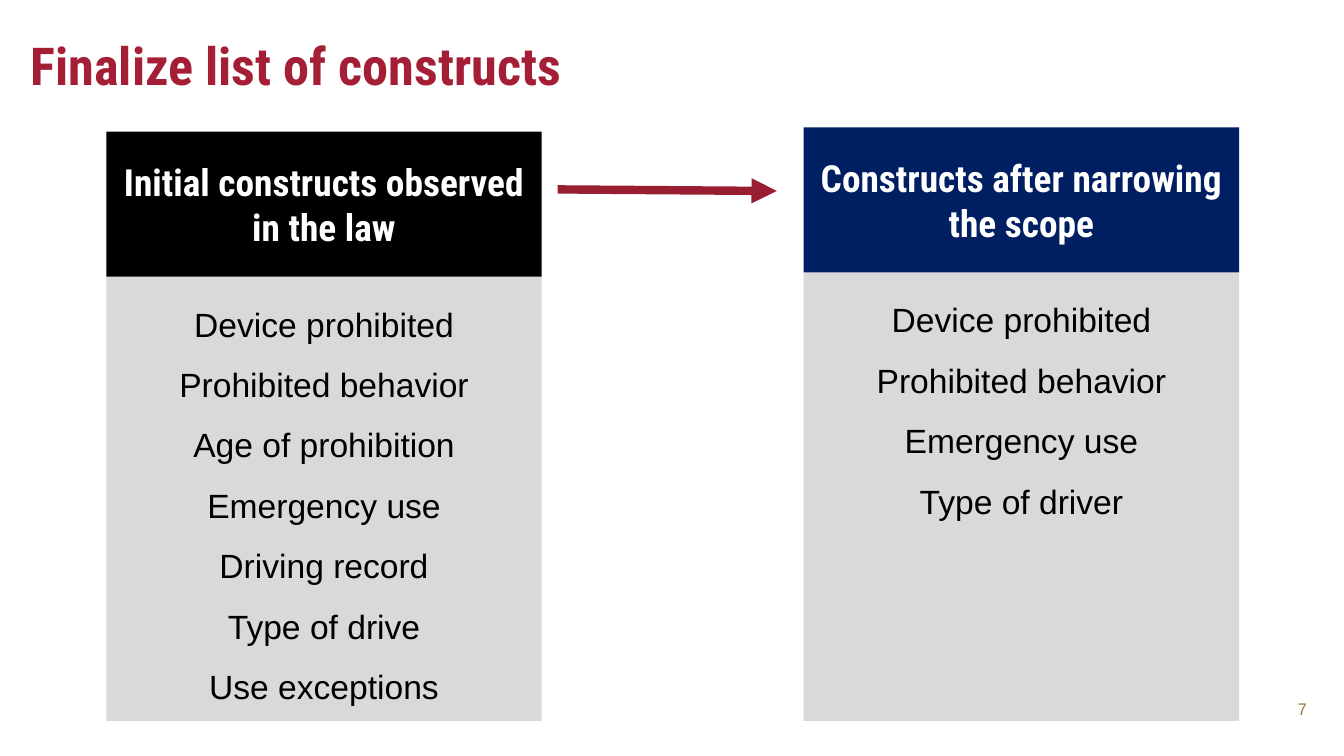
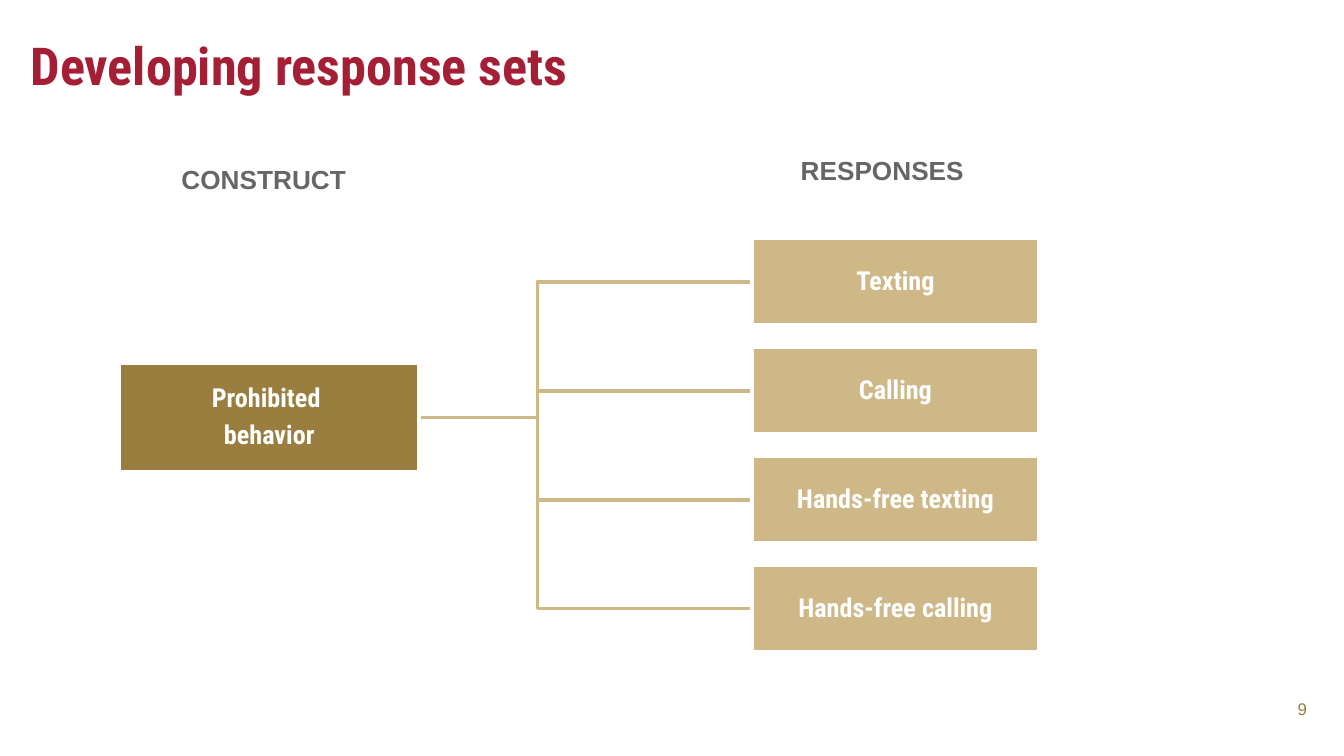
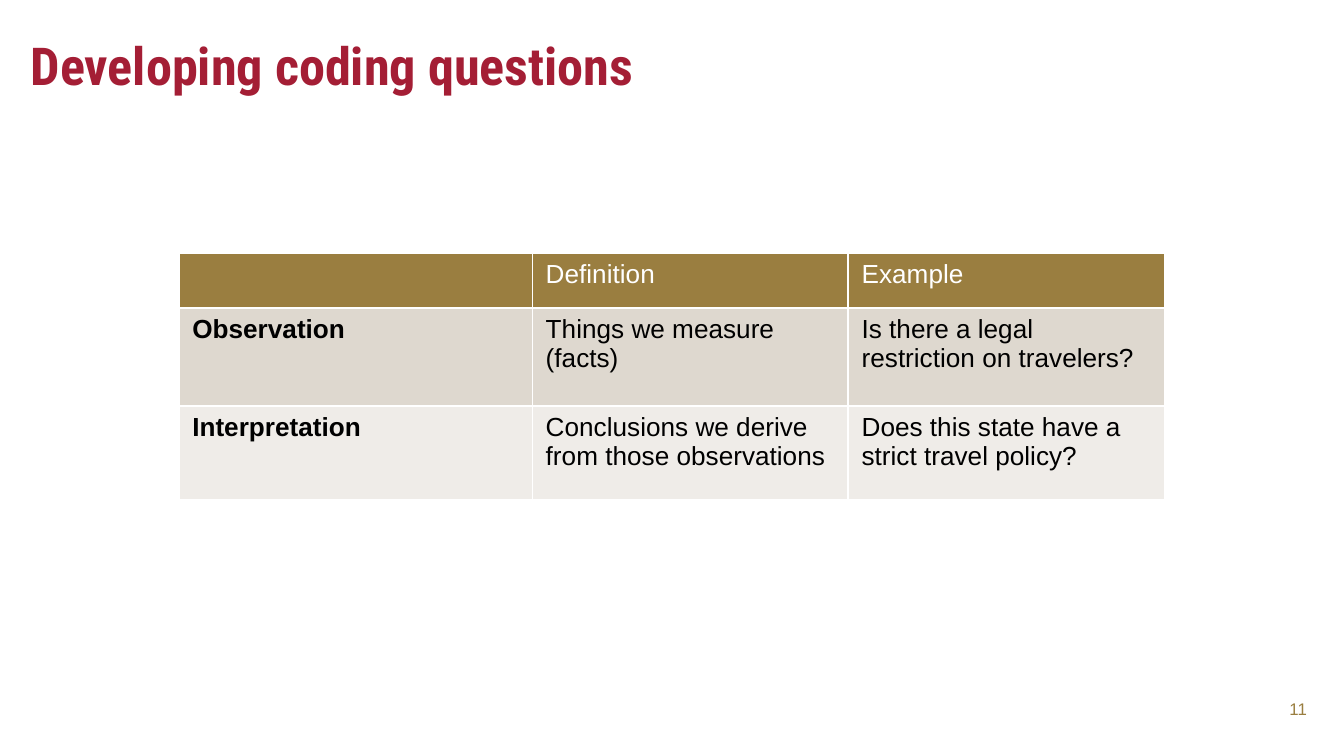
"""Builds three slides on legal constructs, response sets and coding questions."""
import pptx
import pptx.dml.color
import pptx.enum.shapes
import pptx.enum.text
import pptx.oxml
import pptx.oxml.ns
import pptx.util
from lxml import etree

Cm = pptx.util.Cm
Pt = pptx.util.Pt
ALIGN = pptx.enum.text.PP_ALIGN
ANCHOR = pptx.enum.text.MSO_ANCHOR

COLORS = {
    "title": "A41E35", "arrow": "981E32", "gold": "9A7E40", "sand": "CEB888",
    "black": "000000", "white": "FFFFFF", "navy": "001E62", "panel": "D9D9D9",
    "label": "666666", "band": "DED8CF", "light band": "EFECE8",
}
HEADING_FONT, BODY_FONT = "Roboto Condensed", "Arial"

CONSTRUCT_COLUMNS = [
    {"heading": "Initial constructs observed in the law", "color": "black",
     "left": 2.01, "top": 2.49,
     "items": ["Device prohibited", "Prohibited behavior", "Age of prohibition",
               "Emergency use", "Driving record", "Type of drive", "Use exceptions"]},
    {"heading": "Constructs after narrowing the scope", "color": "navy",
     "left": 15.19, "top": 2.41,
     "items": ["Device prohibited", "Prohibited behavior", "Emergency use",
               "Type of driver"]},
]
COLUMN_WIDTH, HEADING_HEIGHT, COLUMN_BOTTOM = 8.23, 2.74, 13.63
ARROW = (10.54, 3.58, 14.68, 3.61)

CONSTRUCT = ["Prohibited ", "behavior"]
CONSTRUCT_BOX = (2.26, 6.86, 5.66, 2.06)
RESPONSES = ["Texting", "Calling", "Hands-free texting", "Hands-free calling"]
RESPONSE_LEFT, RESPONSE_TOP, RESPONSE_PITCH = 14.22, 4.5, 2.06
RESPONSE_WIDTH, RESPONSE_HEIGHT = 5.41, 1.65
BRANCH_START, BRANCH_MIDDLE = 6.1, 10.16
LABELS = [("CONSTRUCT", (1.57, 2.97, 6.83, 1.02)),
          ("RESPONSES", (13.26, 2.79, 6.83, 1.02))]

QUESTION_ROWS = [
    ["", "Definition", "Example"],
    ["Observation", "Things we measure (facts)",
     "Is there a legal restriction on travelers?"],
    ["Interpretation", "Conclusions we derive from those observations",
     "Does this state have a strict travel policy?"],
]
ROW_FILLS = ["gold", "band", "light band"]
TABLE_LEFT, TABLE_TOP = 3.38, 4.78
COLUMN_WIDTHS, ROW_HEIGHTS = [6.68, 5.97, 5.99], [1.04, 1.85, 1.78]


def rgb(name):
    return pptx.dml.color.RGBColor.from_string(COLORS[name])


def write(frame, lines, size, color, font=BODY_FONT, bold=False, align=ALIGN.CENTER,
          anchor=ANCHOR.TOP, spacing=None, after=None, margin=None):
    frame.word_wrap = True
    frame.vertical_anchor = anchor
    if margin is not None:
        frame.margin_left = frame.margin_right = Cm(margin)
        frame.margin_top = frame.margin_bottom = Cm(margin)
    for index, line in enumerate(lines):
        paragraph = frame.paragraphs[0] if index == 0 else frame.add_paragraph()
        paragraph.alignment = align
        if spacing:
            paragraph.line_spacing = spacing
        if after:
            paragraph.space_after = Pt(after)
        run = paragraph.add_run()
        run.text = line
        run.font.size = Pt(size)
        run.font.name = font
        run.font.bold = bold
        run.font.color.rgb = rgb(color)


def add_box(slide, box, fill, outline=None):
    shape = slide.shapes.add_shape(
        pptx.enum.shapes.MSO_SHAPE.RECTANGLE, *map(Cm, box))
    shape.shadow.inherit = False
    shape.fill.solid()
    shape.fill.fore_color.rgb = rgb(fill)
    if outline:
        shape.line.color.rgb = rgb(outline)
        shape.line.width = Pt(2)
    else:
        shape.line.fill.background()
    return shape


def add_slide(presentation, title, number):
    slide = presentation.slides.add_slide(presentation.slide_layouts[5])
    shape = slide.shapes.title
    shape.left, shape.top, shape.width, shape.height = map(Cm, (0.33, 0.38, 23.27, 1.6))
    shape.text_frame.auto_size = pptx.enum.text.MSO_AUTO_SIZE.NONE
    write(shape.text_frame, [title], 28, "title", HEADING_FONT, True, ALIGN.LEFT,
          margin=0.25)
    footer = slide.shapes.add_textbox(*map(Cm, (23.83, 12.93, 1.12, 0.94)))
    write(footer.text_frame, [str(number)], 9, "gold", align=ALIGN.RIGHT,
          anchor=ANCHOR.MIDDLE, margin=0.25)
    return slide


def add_arrow(slide):
    connector = slide.shapes.add_connector(
        pptx.enum.shapes.MSO_CONNECTOR.STRAIGHT, *map(Cm, ARROW))
    connector.line.color.rgb = rgb("arrow")
    connector.line.width = Pt(4.5)
    properties = connector.element.spPr
    line = properties.find(pptx.oxml.ns.qn("a:ln"))
    etree.SubElement(line, pptx.oxml.ns.qn("a:tailEnd"), type="triangle")
    etree.SubElement(properties, pptx.oxml.ns.qn("a:effectLst"))


def build_constructs(presentation):
    slide = add_slide(presentation, "Finalize list of constructs", 7)
    for column in CONSTRUCT_COLUMNS:
        left, top = column["left"], column["top"]
        body_top = top + HEADING_HEIGHT
        body = add_box(slide, (left, body_top, COLUMN_WIDTH, COLUMN_BOTTOM - body_top),
                       "panel")
        write(body.text_frame, column["items"], 18, "black", spacing=1.5)
        heading = add_box(slide, (left, top, COLUMN_WIDTH, HEADING_HEIGHT),
                          column["color"])
        write(heading.text_frame, [column["heading"]], 20, "white", HEADING_FONT, True,
              anchor=ANCHOR.MIDDLE)
    add_arrow(slide)


def add_branch(slide, start_y, end_y):
    builder = slide.shapes.build_freeform(Cm(BRANCH_START), Cm(start_y))
    corners = [(BRANCH_MIDDLE, start_y), (BRANCH_MIDDLE, end_y), (RESPONSE_LEFT, end_y)]
    builder.add_line_segments([(Cm(x), Cm(y)) for x, y in corners], close=False)
    branch = builder.convert_to_shape()
    branch.shadow.inherit = False
    branch.fill.background()
    branch.line.color.rgb = rgb("sand")
    branch.line.width = Pt(2)


def add_node(slide, box, lines, fill):
    node = add_box(slide, box, fill, "white")
    write(node.text_frame, lines, 14, "white", HEADING_FONT, True,
          anchor=ANCHOR.MIDDLE, spacing=0.9, after=5, margin=0.03)


def build_responses(presentation):
    slide = add_slide(presentation, "Developing response sets", 9)
    tops = [RESPONSE_TOP + index * RESPONSE_PITCH for index in range(len(RESPONSES))]
    construct_middle = CONSTRUCT_BOX[1] + CONSTRUCT_BOX[3] / 2
    for top in tops:
        add_branch(slide, construct_middle, top + RESPONSE_HEIGHT / 2)
    add_node(slide, CONSTRUCT_BOX, CONSTRUCT, "gold")
    for response, top in zip(RESPONSES, tops):
        add_node(slide, (RESPONSE_LEFT, top, RESPONSE_WIDTH, RESPONSE_HEIGHT),
                 [response], "sand")
    for text, box in LABELS:
        label = slide.shapes.add_textbox(*map(Cm, box))
        write(label.text_frame, [text], 14, "label", bold=True)


def add_borders(cell):
    properties = cell._tc.get_or_add_tcPr()
    for side in ("lnL", "lnR", "lnT", "lnB"):
        properties.append(pptx.oxml.parse_xml(
            f'<a:{side} {pptx.oxml.ns.nsdecls("a")} w="12700"><a:solidFill>'
            f'<a:srgbClr val="{COLORS["white"]}"/></a:solidFill></a:{side}>'))


def build_questions(presentation):
    slide = add_slide(presentation, "Developing coding questions", 11)
    table = slide.shapes.add_table(
        len(ROW_HEIGHTS), len(COLUMN_WIDTHS), Cm(TABLE_LEFT), Cm(TABLE_TOP),
        Cm(sum(COLUMN_WIDTHS)), Cm(sum(ROW_HEIGHTS))).table
    table.first_row = table.horz_banding = False
    for column, width in zip(table.columns, COLUMN_WIDTHS):
        column.width = Cm(width)
    for row_index, texts in enumerate(QUESTION_ROWS):
        table.rows[row_index].height = Cm(ROW_HEIGHTS[row_index])
        for column_index, text in enumerate(texts):
            cell = table.cell(row_index, column_index)
            add_borders(cell)
            cell.fill.solid()
            cell.fill.fore_color.rgb = rgb(ROW_FILLS[row_index])
            if text:
                write(cell.text_frame, [text], 14, "black" if row_index else "white",
                      bold=column_index == 0, align=ALIGN.LEFT)


def main():
    presentation = pptx.Presentation()
    presentation.slide_width, presentation.slide_height = Cm(25.4), Cm(14.29)
    build_constructs(presentation)
    build_responses(presentation)
    build_questions(presentation)
    presentation.save("out.pptx")


if __name__ == "__main__":
    main()
